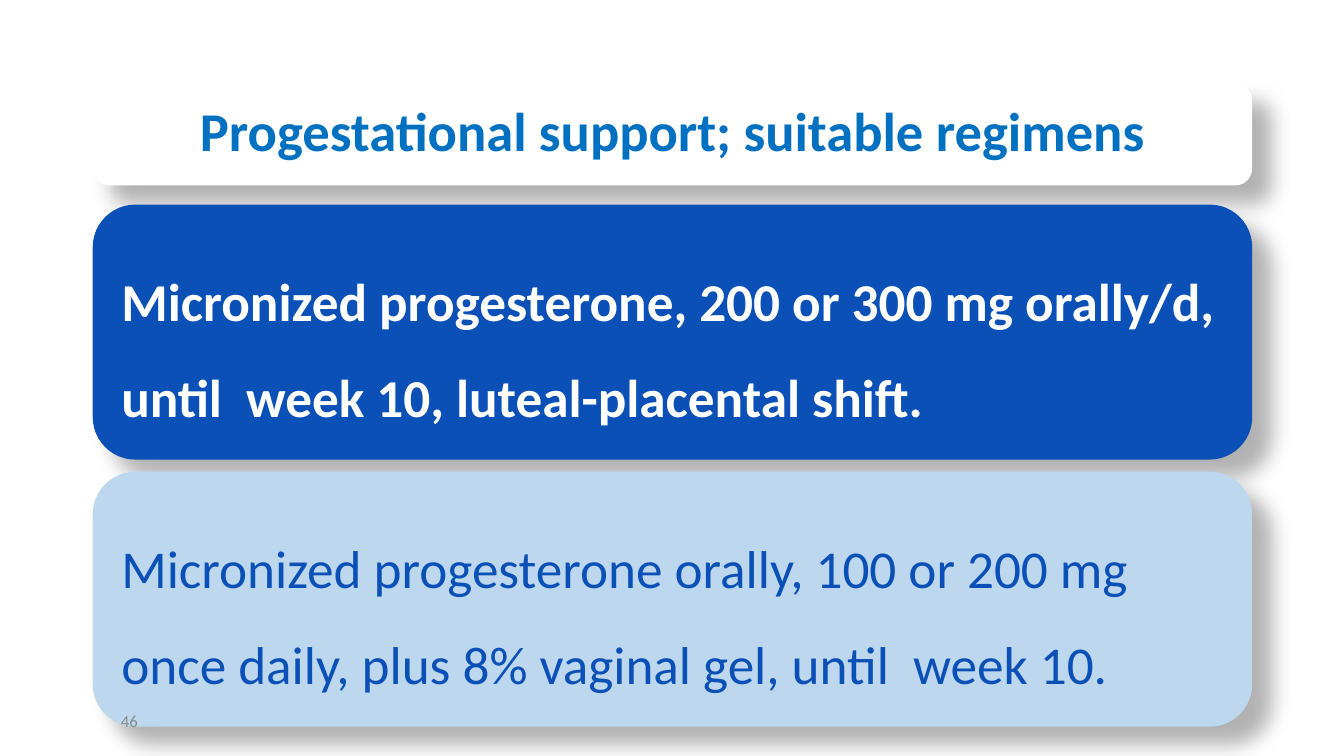
"""Build the slide on progestational support regimens."""
import pptx
import pptx.util
import pptx.dml.color
import pptx.enum.shapes
import pptx.enum.text
import pptx.oxml
import pptx.oxml.ns

Inches, Pt = pptx.util.Inches, pptx.util.Pt
PP = pptx.enum.text.PP_ALIGN

TITLE = "Progestational support; suitable regimens"
CARDS = [
    ("Micronized progesterone, 200 or 300 mg orally/d, "
     "until  week 10, luteal-placental shift.", "0A50B6", "FFFFFF", True),
    ("Micronized progesterone orally, 100 or 200 mg once daily, "
     "plus 8% vaginal gel, until  week 10.", "BDD7EE", "0A50B6", False),
]
PAGE = "46"
LEFT, WIDE, TOP, TALL, STEP = 0.92, 11.5, 2.03, 2.53, 2.65
HEAD_TOP, HEAD_TALL, PAD = 0.82, 1.02, 0.16
SHADOW = (
    '<a:effectLst %s><a:outerShdw blurRad="%d" dist="%d" dir="2700000" '
    'algn="tl" rotWithShape="0"><a:srgbClr val="000000">'
    '<a:alpha val="30000"/></a:srgbClr></a:outerShdw></a:effectLst>'
    % (pptx.oxml.ns.nsdecls("a"), Pt(15), Pt(18)))


def color(code):
    return pptx.dml.color.RGBColor.from_string(code)


def write(shape, text, size, ink, bold=False, align=PP.LEFT, space=1.0, pad=None):
    frame = shape.text_frame
    frame.text = text
    frame.word_wrap = True
    frame.auto_size = pptx.enum.text.MSO_AUTO_SIZE.NONE
    frame.vertical_anchor = pptx.enum.text.MSO_ANCHOR.MIDDLE
    if pad is not None:
        frame.margin_left = frame.margin_right = Inches(pad)
        frame.margin_top = frame.margin_bottom = Inches(pad)
    para = frame.paragraphs[0]
    para.alignment = align
    para.line_spacing = space
    para.space_before = para.space_after = Pt(0)
    font = para.font
    font.name, font.size, font.bold = "Calibri", Pt(size), bold
    font.color.rgb = color(ink)


def add_card(shapes, top, tall, fill):
    card = shapes.add_shape(
        pptx.enum.shapes.MSO_SHAPE.ROUNDED_RECTANGLE,
        Inches(LEFT), Inches(top), Inches(WIDE), Inches(tall))
    card.fill.solid()
    card.fill.fore_color.rgb = color(fill)
    card.line.fill.background()
    card.element.spPr.append(pptx.oxml.parse_xml(SHADOW))
    return card


def main():
    deck = pptx.Presentation()
    deck.slide_width, deck.slide_height = Inches(13.33), Inches(7.5)
    shapes = deck.slides.add_slide(deck.slide_layouts[5]).shapes

    head = add_card(shapes, HEAD_TOP, HEAD_TALL, "FFFFFF")
    title = shapes.title
    title.left, title.top = Inches(LEFT + 0.05), Inches(HEAD_TOP + 0.05)
    title.width, title.height = Inches(WIDE - 0.1), Inches(HEAD_TALL - 0.1)
    write(title, TITLE, 39, "0070C0", True, PP.CENTER, 0.9, PAD)
    head.element.addnext(title.element)

    for row, (text, fill, ink, bold) in enumerate(CARDS):
        card = add_card(shapes, TOP + row * STEP, TALL, fill)
        write(card, text, 38, ink, bold, space=1.5, pad=PAD)

    page = shapes.add_textbox(Inches(1.1), Inches(6.95), Inches(3), Inches(0.4))
    write(page, PAGE, 12, "8C8C8C")
    deck.save("out.pptx")


if __name__ == "__main__":
    main()
